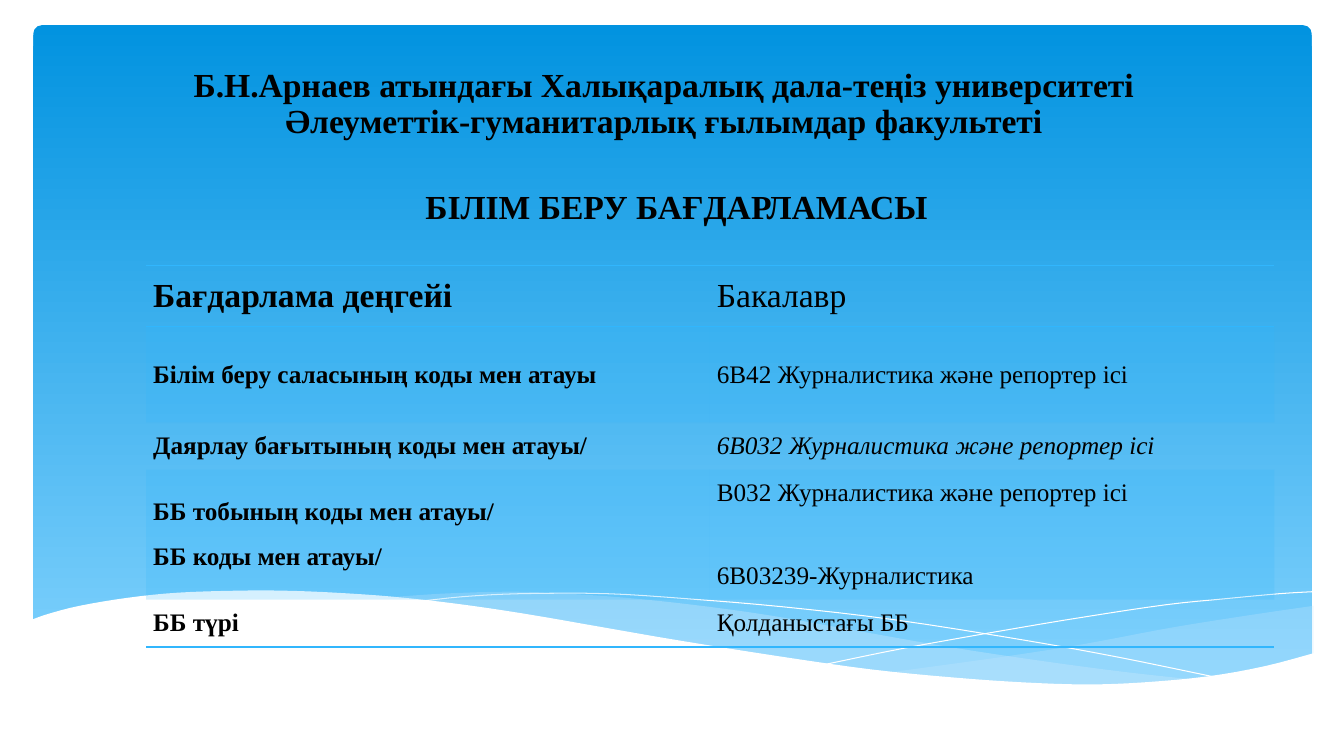
from lxml import etree
from pptx import Presentation
from pptx import util as u
from pptx.dml import color
from pptx.enum import shapes, text
from pptx.oxml import ns

FONT = "Times New Roman"
BLUE = "31B6FD"
PALE = "C6E7FC"
WHITE = "FFFFFF"
NO_STYLE = "{2D5ABB26-0587-4C30-8999-92F81FD0307C}"

WAVE_RIGHT_TOP = [(13.03, 6.01), (12.48, 6.09), (11.9, 6.18), (11.49, 6.25),
                  (10.75, 6.39), (10.06, 6.5), (9.42, 6.59), (8.83, 6.67)]
WAVE_RIGHT_BOTTOM = [(8.83, 6.67), (9.41, 6.73), (10.1, 6.78), (10.72, 6.8),
                     (11.4, 6.78), (11.98, 6.72), (12.49, 6.63), (13.03, 6.49)]
WAVE_LONG_TOP = [(11.92, 6.75), (11.18, 6.67), (10.35, 6.56), (9.42, 6.42),
                 (8.4, 6.24), (7.6, 6.1), (6.87, 6), (6.2, 5.93),
                 (5.61, 5.89), (5.07, 5.87), (4.38, 5.89), (3.82, 5.93)]
WAVE_LONG_BOTTOM = [(3.82, 5.93), (4.57, 6.01), (5.4, 6.13), (6, 6.24),
                    (7.07, 6.42), (8.03, 6.57), (8.88, 6.68), (9.64, 6.76),
                    (10.32, 6.79), (10.92, 6.8), (11.45, 6.79), (11.92, 6.75)]
LINE_FALLING = [(4.13, 5.97), (4.59, 5.92), (5.17, 5.89), (6.01, 5.89),
                (6.81, 5.94), (7.76, 6.02), (8.88, 6.15), (10.15, 6.35),
                (11.09, 6.52), (12.11, 6.73)]
LINE_RISING = [(8.19, 6.59), (8.97, 6.43), (9.98, 6.25), (10.76, 6.12),
               (11.56, 6), (12.15, 5.94), (12.69, 5.89), (13.02, 5.87)]
WAVE_FRONT = [(13.03, 6.48), (12.54, 6.61), (11.98, 6.71), (11.34, 6.77),
              (10.78, 6.79), (10.15, 6.77), (9.44, 6.72), (8.63, 6.64),
              (7.72, 6.51), (6.71, 6.35), (5.96, 6.22), (5.21, 6.09),
              (4.53, 5.99), (3.9, 5.92), (3.33, 5.88), (2.82, 5.86),
              (2.35, 5.86), (1.76, 5.88), (1.27, 5.93), (0.79, 6.01),
              (0.48, 6.09), (0.31, 6.15)]

ROWS = [
    (0.61, 24, "Бағдарлама деңгейі", "Бакалавр"),
    (0.95, 18, "Білім беру саласының коды мен атауы",
     "6В42 Журналистика және репортер ісі"),
    (0.47, 18, "Даярлау бағытының коды мен атауы/",
     "6B032 Журналистика және репортер ісі"),
    (1.29, 18, "ББ тобының коды мен атауы/\nББ коды мен атауы/",
     "B032 Журналистика және репортер ісі\n6В03239-Журналистика"),
    (0.47, 18, "ББ түрі", "Қолданыстағы ББ"),
]


def rgb(value):
    return color.RGBColor.from_string(value)


def set_alpha(fill_parent, percent):
    solid = fill_parent.find(ns.qn("a:solidFill"))
    etree.SubElement(solid[0], ns.qn("a:alpha"), val=str(percent * 1000))


def write(frame, words, size=24, bold=True, italic=False, align=None,
          spacing=None, before=0, after=0):
    for index, line in enumerate(words.split("\n")):
        para = frame.paragraphs[0] if index == 0 else frame.add_paragraph()
        para.alignment = align
        para.line_spacing = spacing
        para.space_before, para.space_after = u.Pt(before), u.Pt(after)
        span = para.add_run()
        span.text = line
        span.font.name, span.font.size = FONT, u.Pt(size)
        span.font.bold, span.font.italic = bold, italic
        span.font.color.rgb = rgb("000000")


def smooth(points, steps=4):
    """Return points on a Catmull-Rom curve through the given ones."""
    padded = [points[0], *points, points[-1]]
    curve = []
    for a, b, c, d in zip(padded, padded[1:], padded[2:], padded[3:]):
        for step in range(steps):
            t = step / steps
            curve.append(tuple(
                q + t * (r - p) / 2
                + t ** 2 * (2 * p - 5 * q + 4 * r - s) / 2
                + t ** 3 * (3 * q - p - 3 * r + s) / 2
                for p, q, r, s in zip(a, b, c, d)))
    return curve + [points[-1]]


def add_outline(page, points, fill=None, alpha=100):
    corners = [(u.Inches(x), u.Inches(y)) for x, y in points]
    builder = page.shapes.build_freeform(*corners[0])
    builder.add_line_segments(corners[1:], close=fill is not None)
    shape = builder.convert_to_shape()
    shape.shadow.inherit = False
    if fill:
        shape.fill.solid()
        shape.fill.fore_color.rgb = rgb(fill)
        set_alpha(shape.element.spPr, alpha)
        shape.line.fill.background()
    else:
        shape.fill.background()
        shape.line.color.rgb = rgb(WHITE)
        shape.line.width = u.Pt(0)


def add_sky(page):
    sky = page.shapes.add_shape(
        shapes.MSO_SHAPE.ROUNDED_RECTANGLE,
        u.Inches(0.33), u.Inches(0.25), u.Inches(12.68), u.Inches(6.6))
    sky.adjustments[0] = 0.013
    sky.shadow.inherit = False
    sky.line.fill.background()
    sky.fill.gradient()
    sky.fill.gradient_angle = 270
    for stop, shade, place in zip(sky.fill.gradient_stops,
                                  ("0293E0", "83D3FE"), (0, 1)):
        stop.color.rgb = rgb(shade)
        stop.position = place


def add_waves(page):
    add_outline(page, smooth(WAVE_RIGHT_TOP) + smooth(WAVE_RIGHT_BOTTOM), PALE, 29)
    add_outline(page, smooth(WAVE_LONG_TOP) + smooth(WAVE_LONG_BOTTOM), PALE, 40)
    add_outline(page, smooth(LINE_FALLING))
    add_outline(page, smooth(LINE_RISING))
    add_outline(page, smooth(WAVE_FRONT) + [(0.31, 7.31), (13.03, 7.31)], WHITE)


def place_title(page, words):
    title = page.shapes.title
    title.element.getparent().append(title.element)
    title.left, title.top = u.Inches(1.58), u.Inches(0)
    title.width, title.height = u.Inches(10.01), u.Inches(1.45)
    frame = title.text_frame
    frame.auto_size = text.MSO_AUTO_SIZE.NONE
    frame.vertical_anchor = text.MSO_ANCHOR.BOTTOM
    write(frame, words, align=text.PP_ALIGN.CENTER, spacing=0.9)


def add_heading(page, words):
    box = page.shapes.add_textbox(
        u.Inches(4.12), u.Inches(1.79), u.Inches(5.58), u.Inches(0.5))
    frame = box.text_frame
    frame.word_wrap = True
    frame.auto_size = text.MSO_AUTO_SIZE.SHAPE_TO_FIT_TEXT
    frame.vertical_anchor = text.MSO_ANCHOR.MIDDLE
    write(frame, words)


def add_border(cell, side):
    line = etree.Element(ns.qn(f"a:{side}"), w=str(u.Pt(1)))
    solid = etree.SubElement(line, ns.qn("a:solidFill"))
    etree.SubElement(solid, ns.qn("a:srgbClr"), val=BLUE)
    borders = cell._tc.get_or_add_tcPr()
    borders.insert(len(borders.findall(ns.qn("a:lnT"))), line)


def format_cell(cell, row):
    cell.margin_left = cell.margin_right = u.Inches(0.07)
    cell.margin_top = cell.margin_bottom = 0
    cell.vertical_anchor = text.MSO_ANCHOR.MIDDLE
    if row % 2:
        cell.fill.solid()
        cell.fill.fore_color.rgb = rgb(BLUE)
        set_alpha(cell._tc.tcPr, 20)
    else:
        cell.fill.background()
    for side in {0: ("lnT", "lnB"), len(ROWS) - 1: ("lnB",)}.get(row, ()):
        add_border(cell, side)


def add_programme_table(page):
    frame = page.shapes.add_table(
        len(ROWS), 2, u.Inches(1.45), u.Inches(2.63), u.Inches(11.19), u.Inches(3.79))
    table = frame.table
    table.first_row = table.horz_banding = False
    frame.element.find(f".//{ns.qn('a:tableStyleId')}").text = NO_STYLE
    table.columns[0].width, table.columns[1].width = u.Inches(5.59), u.Inches(5.6)
    for row, (height, size, label, value) in enumerate(ROWS):
        table.rows[row].height = u.Inches(height)
        gap = 0 if row in (2, 3) else 6
        for column, words in enumerate((label, value)):
            cell = table.cell(row, column)
            format_cell(cell, row)
            space = gap if column else 6
            write(cell.text_frame, words, size=size, bold=column == 0,
                  italic=(row, column) == (2, 1), before=space, after=space)
    code = table.cell(3, 1).text_frame.paragraphs[1]
    code.space_before, code.space_after = u.Pt(39), u.Pt(6)


def main():
    deck = Presentation()
    deck.slide_width, deck.slide_height = u.Inches(13.33), u.Inches(7.5)
    page = deck.slides.add_slide(deck.slide_layouts[5])
    add_sky(page)
    add_waves(page)
    place_title(page, "Б.Н.Арнаев атындағы Халықаралық дала-теңіз университеті\n"
                      "Әлеуметтік-гуманитарлық ғылымдар факультеті")
    add_programme_table(page)
    add_heading(page, "БІЛІМ БЕРУ БАҒДАРЛАМАСЫ")
    deck.save("out.pptx")


if __name__ == "__main__":
    main()
